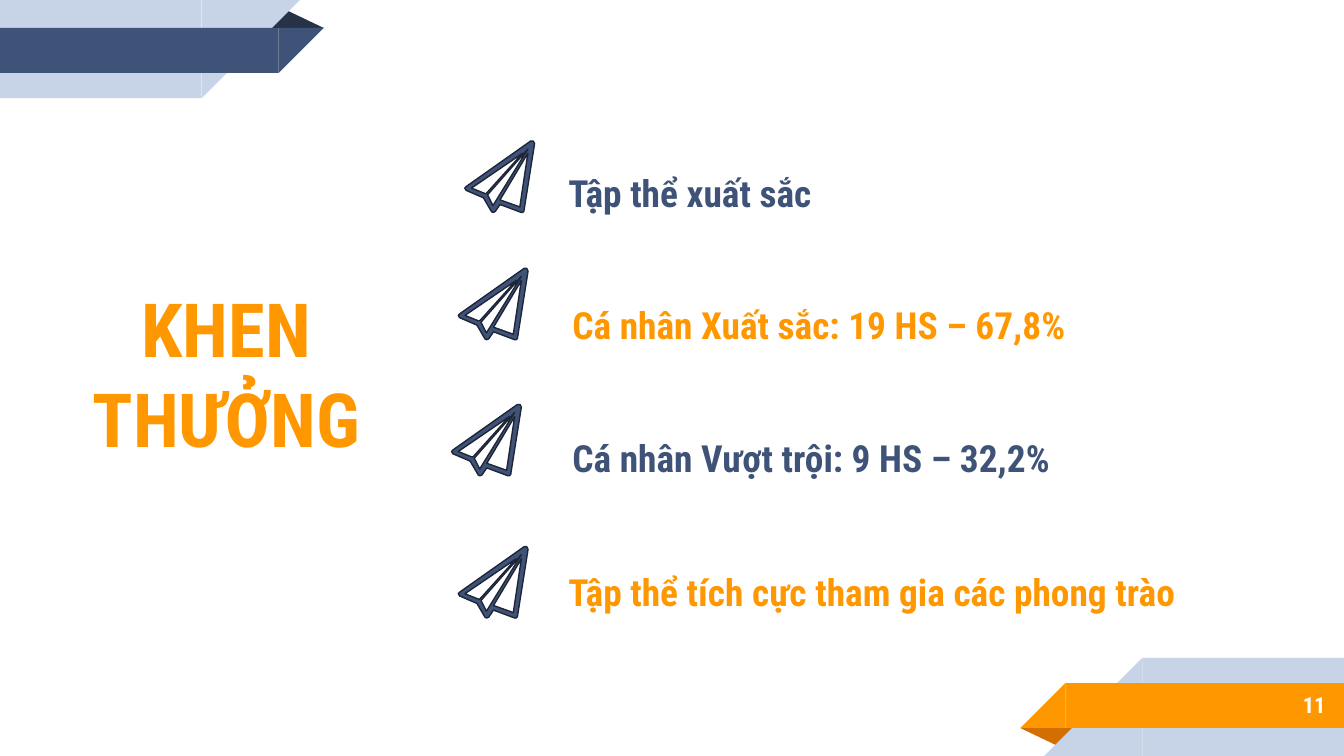
import pptx
import pptx.util
import pptx.dml.color
import pptx.enum.shapes
import pptx.enum.text

Pt = pptx.util.Pt
RGB = pptx.dml.color.RGBColor
Kind = pptx.enum.shapes.MSO_SHAPE
Align = pptx.enum.text.PP_ALIGN
Anchor = pptx.enum.text.MSO_ANCHOR

NAVY = RGB(0x3F, 0x53, 0x78)
INK = RGB(0x1D, 0x25, 0x36)
NIGHT = RGB(0x26, 0x32, 0x48)
PALE = RGB(0xC7, 0xD3, 0xE6)
AMBER = RGB(0xFF, 0x98, 0x00)
RUST = RGB(0xD2, 0x6F, 0x00)
WHITE = RGB(0xFF, 0xFF, 0xFF)

WIDE, HIGH = 720, 405
PLANE = [
    [(36.7, 0), (35.3, 0), (0.7, 24.4), (0, 25.2), (0.7, 26.4), (10, 30.4),
     (14.4, 37.9), (15.2, 38.2), (16.3, 37.8), (18.9, 34), (30.2, 38.2),
     (31, 38.2), (31.7, 37.6), (37.4, 1.4)],
    [(29.5, 35.3), (19.4, 31.7), (18.9, 31.5), (33.8, 6.5)],
    [(12.2, 28.8), (33.8, 4.3), (15.1, 34.6)],
    [(3.6, 25.2), (31, 6.5), (11.5, 28.1), (10.8, 28.1)],
]


class Deck:
    """Hold the style and the current slide, and draw each kind of element."""

    def __init__(self):
        self.file = pptx.Presentation()
        self.file.slide_width, self.file.slide_height = Pt(WIDE), Pt(HIGH)
        self.slide = self.file.slides.add_slide(self.file.slide_layouts[6])
        self.font = {"name": "Roboto Condensed", "bold": True}

    def paint(self, shape, fill, line=None):
        shape.shadow.inherit = False
        shape.fill.solid()
        shape.fill.fore_color.rgb = fill
        if line is None:
            shape.line.fill.background()
        else:
            shape.line.color.rgb = line
            shape.line.width = Pt(0.75)

    def shape(self, kind, box, fill, turn=0):
        shape = self.slide.shapes.add_shape(kind, *map(Pt, box))
        shape.rotation = turn
        self.paint(shape, fill)
        return shape

    def ribbon(self, band, fold, turned):
        parts = [
            (Kind.ISOSCELES_TRIANGLE, (142.5, 5, 31, 10), fold, 0),
            (Kind.RECTANGLE, (0, 0, 108, 52.6), PALE, 0),
            (Kind.RIGHT_TRIANGLE, (108, 0, 52.6, 52.6), PALE, 90),
            (Kind.RECTANGLE, (0, 15, 149.3, 24), band, 0),
            (Kind.RIGHT_TRIANGLE, (149.3, 15, 24, 24), band, 90),
        ]
        for kind, (x, y, w, h), fill, turn in parts:
            if turned:
                x, y, turn = WIDE - x - w, HIGH - y - h, turn + 180
            shape = self.shape(kind, (x, y, w, h), fill, turn)
            if kind == Kind.ISOSCELES_TRIANGLE:
                shape.adjustments[0] = 0.324

    def plane(self, left, top):
        paths = [[(Pt(left + x), Pt(top + y)) for x, y in path] for path in PLANE]
        pen = self.slide.shapes.build_freeform(*paths[0][0])
        for path in paths:
            if path is not paths[0]:
                pen.move_to(*path[0])
            pen.add_line_segments(path[1:], close=True)
        self.paint(pen.convert_to_shape(), NAVY, INK)

    def text(self, words, box, size, color, pad=7.2, frame=None, para=None):
        body = self.slide.shapes.add_textbox(*map(Pt, box)).text_frame
        line = body.paragraphs[0]
        run = line.add_run()
        run.text = words
        run.font.color.rgb = color
        edge = {"word_wrap": True, "margin_top": Pt(pad), "margin_bottom": Pt(pad)}
        looks = [
            (body, {**edge, **(frame or {})}),
            (line, para or {}),
            (run.font, {**self.font, "size": Pt(size)}),
        ]
        for item, look in looks:
            for name, value in look.items():
                setattr(item, name, value)


def main():
    deck = Deck()
    deck.ribbon(NAVY, NIGHT, False)
    deck.ribbon(AMBER, RUST, True)
    mid = {"vertical_anchor": Anchor.MIDDLE}
    deck.text("11", (599.8, 365, 117.4, 25.2), 12, WHITE,
              frame=mid, para={"alignment": Align.RIGHT})
    deck.text("KHEN THƯỞNG", (10, 154, 222.5, 91.5), 40, AMBER,
              frame=mid, para={"alignment": Align.CENTER})
    rows = [
        ("Tập thể xuất sắc", NAVY, (249, 75.6), (297.4, 75.6, 417.6, 39.6)),
        ("Cá nhân Xuất sắc: 19 HS – 67,8%", AMBER, (245.5, 143.8), (299.5, 146.2, 385.2, 43.9)),
        ("Cá nhân Vượt trội: 9 HS – 32,2%", NAVY, (241.9, 216.7), (299.5, 217.4, 397.4, 43.9)),
        ("Tập thể tích cực tham gia các phong trào", AMBER, (245.5, 292.9), (297.4, 289.4, 385.2, 39.6)),
    ]
    for words, color, spot, box in rows:
        deck.plane(*spot)
        deck.text(words, box, 20, color, pad=3.6, para={"line_spacing": 1.5})
    deck.file.save("out.pptx")


if __name__ == "__main__":
    main()
